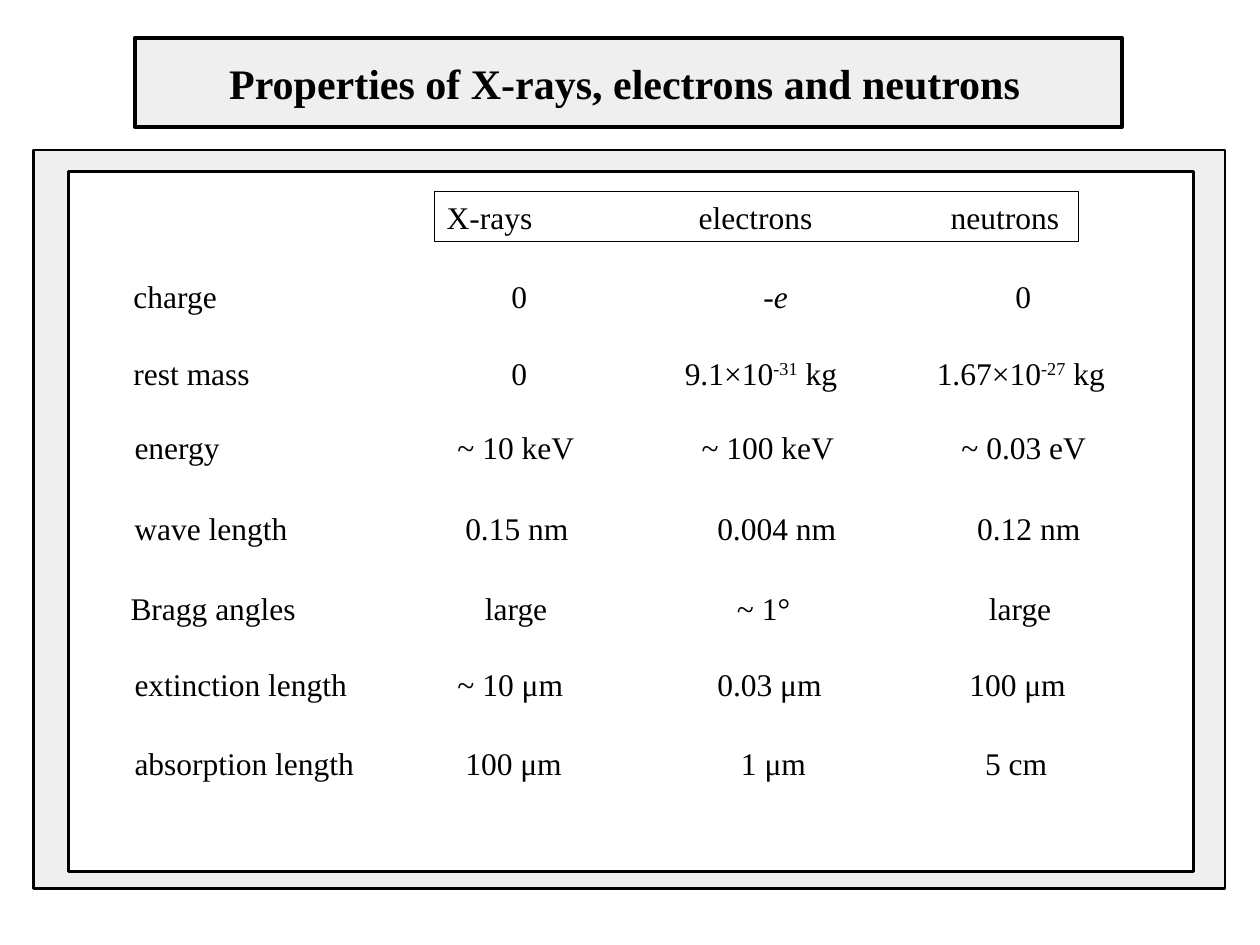
from dataclasses import dataclass

from lxml.etree import SubElement
from pptx import Presentation
from pptx.dml.color import RGBColor
from pptx.enum.shapes import MSO_SHAPE as Shape
from pptx.enum.text import MSO_ANCHOR as Anchor, MSO_AUTO_SIZE as AutoSize, PP_ALIGN as Align
from pptx.oxml.ns import qn
from pptx.util import Pt


@dataclass(frozen=True)
class Theme:
    font: str = "Times New Roman"
    title_size: float = 24
    body_size: float = 18
    ink: RGBColor = RGBColor(0x00, 0x00, 0x00)
    panel: RGBColor = RGBColor(0xEF, 0xEF, 0xEF)
    paper: RGBColor = RGBColor(0xFF, 0xFF, 0xFF)


@dataclass(frozen=True)
class Piece:
    text: str
    italic: bool = False
    superscript: bool = False


class SlideBuilder:
    def __init__(self, slide, theme):
        self.slide = slide
        self.theme = theme

    def panel(self, left, top, width, height, line_width, fill=None):
        """Draw a framed rectangle, open when no fill is given."""
        frame = self.slide.shapes.add_shape(
            Shape.RECTANGLE, Pt(left), Pt(top), Pt(width), Pt(height))
        frame.shadow.inherit = False
        if fill is None:
            frame.fill.background()
        else:
            frame.fill.solid()
            frame.fill.fore_color.rgb = fill
        frame.line.color.rgb = self.theme.ink
        frame.line.width = Pt(line_width)
        return frame

    def set_line(self, holder, pieces, size, bold=False, tabs=()):
        """Fill one left-aligned line, with its tab stops."""
        frame = holder.text_frame
        frame.word_wrap = False
        frame.auto_size = AutoSize.SHAPE_TO_FIT_TEXT
        frame.vertical_anchor = Anchor.TOP
        line = frame.paragraphs[0]
        line.alignment = Align.LEFT
        if tabs:
            stops = SubElement(line._p.get_or_add_pPr(), qn("a:tabLst"))
            for stop in tabs:
                SubElement(stops, qn("a:tab"), pos=str(Pt(stop)), algn="l")
        line.font.name = self.theme.font
        line.font.size = Pt(size)
        line.font.bold = bold
        line.font.color.rgb = self.theme.ink
        for piece in pieces:
            run = line.add_run()
            run.text = piece.text
            if piece.italic:
                run.font.italic = True
            if piece.superscript:
                run._r.get_or_add_rPr().set("baseline", "30000")

    def title(self, text, left, top, width, height):
        heading = self.slide.shapes.title
        heading.left, heading.top = Pt(left), Pt(top)
        heading.width, heading.height = Pt(width), Pt(height)
        # Bring the title in front of its panel
        heading._element.getparent().append(heading._element)
        self.set_line(heading, [Piece(text)], self.theme.title_size, bold=True)

    def row(self, left, top, width, height, pieces, tabs):
        box = self.slide.shapes.add_textbox(Pt(left), Pt(top), Pt(width), Pt(height))
        self.set_line(box, pieces, self.theme.body_size, tabs=tabs)


COLUMN_STEP = 144
ROW_HEIGHT = 28.8

# Left, top, width, indent of each value within its column, label and values
PROPERTIES = [
    (69.2, 154.7, 533, (72, 72, 72),
     [Piece("charge\t0\t-"), Piece("e", italic=True), Piece("\t0")]),
    (69.2, 198.7, 582.5, (72, 27, 27),
     [Piece("rest mass\t0\t9.1×10"), Piece("-31", superscript=True),
      Piece(" kg\t1.67×10"), Piece("-27", superscript=True), Piece(" kg")]),
    (69.8, 241.2, 564, (40.5, 36, 40.5),
     [Piece("energy\t~ 10 keV\t~ 100 keV\t~ 0.03 eV")]),
    (69.8, 287.3, 560, (45, 45, 49.5),
     [Piece("wave length\t0.15 nm\t0.004 nm\t0.12 nm")]),
    (67.5, 332.8, 541.5, (58.5, 58.5, 58.5),
     [Piece("Bragg angles\tlarge\t~ 1°\tlarge")]),
    (69.8, 376.6, 547, (40.5, 45, 45),
     [Piece("extinction length\t~ 10 μm\t0.03 μm\t100 μm")]),
    (69.8, 421.4, 541.5, (45, 58.5, 54),
     [Piece("absorption length\t100 μm\t1 μm\t5 cm")]),
]


def main():
    deck = Presentation()
    deck.slide_width, deck.slide_height = Pt(720), Pt(540)
    theme = Theme()
    builder = SlideBuilder(deck.slides.add_slide(deck.slide_layouts[5]), theme)

    # Title on its panel, and the outer frame
    builder.panel(77, 21.6, 564, 51, 2.25, theme.panel)
    builder.panel(19, 85.7, 681, 422, 1.5, theme.panel)
    builder.title("Properties of X-rays, electrons and neutrons", 123.8, 29.5, 471, 36)

    # Inner sheet and column headings
    builder.panel(39, 98, 643, 400, 1.5, theme.paper)
    headings = builder.panel(248.2, 109.4, 368, ROW_HEIGHT, 0.75)
    builder.set_line(headings, [Piece("X-rays\telectrons\tneutrons")], theme.body_size,
                     tabs=(COLUMN_STEP, 2 * COLUMN_STEP))

    # One line per property
    for left, top, width, indents, pieces in PROPERTIES:
        tabs = [COLUMN_STEP * column + indent
                for column, indent in enumerate(indents, start=1)]
        builder.row(left, top, width, ROW_HEIGHT, pieces, tabs)

    deck.save("out.pptx")


if __name__ == "__main__":
    main()
